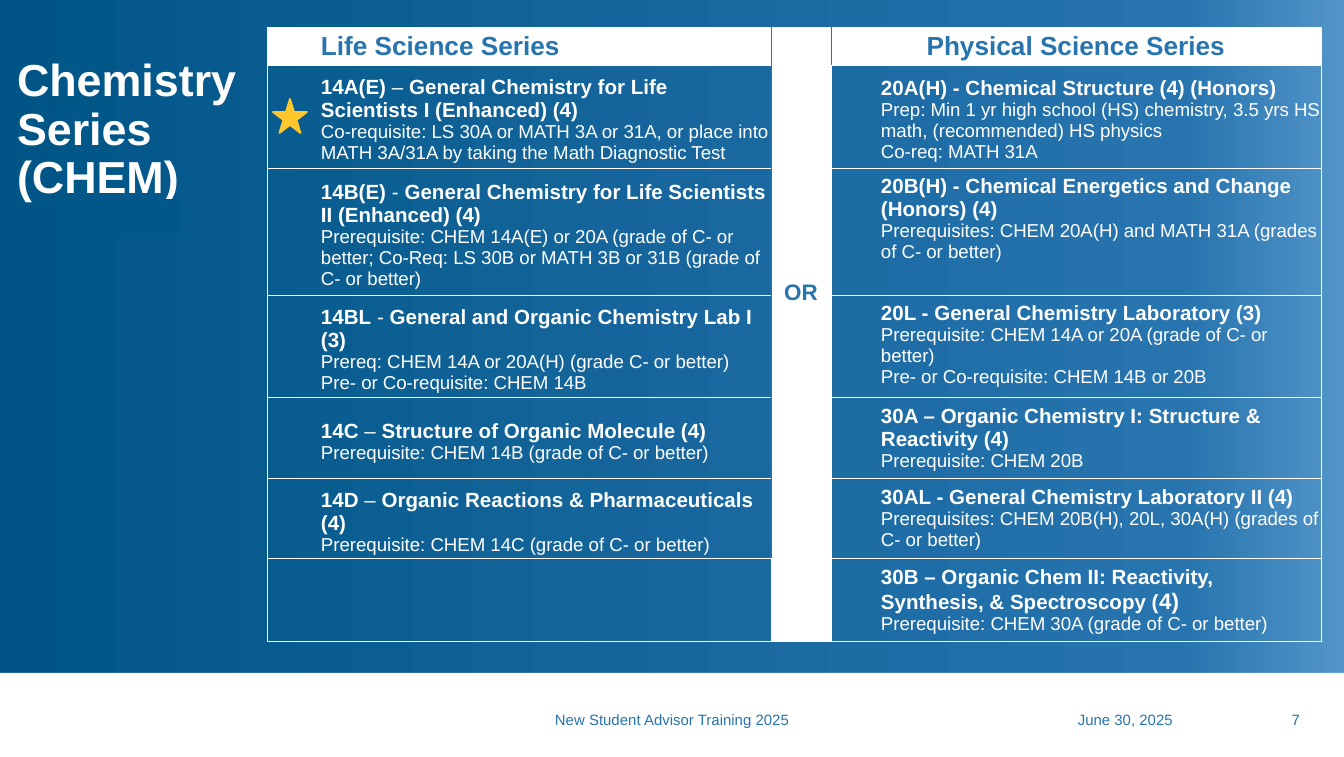
"""Build the chemistry series slide with its two course tracks."""
from copy import deepcopy

from lxml import etree
from pptx import Presentation
from pptx.dml.color import RGBColor
from pptx.enum.shapes import MSO_SHAPE
from pptx.enum.text import MSO_ANCHOR, MSO_AUTO_SIZE, PP_ALIGN
from pptx.oxml.ns import qn
from pptx.util import Pt

RECTANGLE, STAR = MSO_SHAPE.RECTANGLE, MSO_SHAPE.STAR_5_POINT
TOP, MIDDLE, BOTTOM = MSO_ANCHOR.TOP, MSO_ANCHOR.MIDDLE, MSO_ANCHOR.BOTTOM
LEFT, CENTER, RIGHT = PP_ALIGN.LEFT, PP_ALIGN.CENTER, PP_ALIGN.RIGHT
NO_AUTOFIT = MSO_AUTO_SIZE.NONE

WHITE, BLUE, NAVY, PATCH, GOLD = "FFFFFF", "2774AE", "005587", "00578A", "FFC72B"
BACKGROUND = [(0, NAVY), (0.88, BLUE), (1, "5295C9")]
COLUMNS = [504, 60, 490]
ROWS = [38, 103, 127, 103, 81, 80, 83]

LIFE_COURSES = [
    (("14A(E)", " – ", "General Chemistry for Life Scientists I (Enhanced) (4)"),
     "Co-requisite: LS 30A or MATH 3A or 31A, or place into MATH 3A/31A by taking the Math Diagnostic Test"),
    (("14B(E)", " - ", "General Chemistry for Life Scientists II (Enhanced) (4)"),
     "Prerequisite: CHEM 14A(E) or 20A (grade of C- or better; "
     "Co-Req: LS 30B or MATH 3B or 31B (grade of C- or better)"),
    (("14BL", " - ", "General and Organic Chemistry Lab I (3)"),
     "Prereq: CHEM 14A or 20A(H) (grade C- or better)", "Pre- or Co-requisite: CHEM 14B"),
    (("14C", " – ", "Structure of Organic Molecule (4)"),
     "Prerequisite: CHEM 14B (grade of C- or better)"),
    (("14D", " – ", "Organic Reactions & Pharmaceuticals (4)"),
     "Prerequisite: CHEM 14C (grade of C- or better)"),
]
PHYSICAL_COURSES = [
    ("20A(H) - Chemical Structure (4) (Honors)",
     "Prep: Min 1 yr high school (HS) chemistry, 3.5 yrs HS math, (recommended) HS physics",
     "Co-req: MATH 31A"),
    ("20B(H) - Chemical Energetics and Change (Honors) (4)",
     "Prerequisites: CHEM 20A(H) and MATH 31A (grades of C- or better)"),
    ("20L - General Chemistry Laboratory (3)",
     "Prerequisite: CHEM 14A or 20A (grade of C- or better)",
     "Pre- or Co-requisite: CHEM 14B or 20B"),
    ("30A – Organic Chemistry I: Structure & Reactivity (4)", "Prerequisite: CHEM 20B"),
    ("30AL - General Chemistry Laboratory II (4)",
     "Prerequisites: CHEM 20B(H), 20L, 30A(H) (grades of C- or better)"),
    ("30B – Organic Chem II: Reactivity, Synthesis, & Spectroscopy (",
     "Prerequisite: CHEM 30A (grade of C- or better)"),
]


def px(value):
    return round(value * 914400 / 134.4)


def color(value):
    return RGBColor.from_string(value)


class SlideBuilder:
    def __init__(self, presentation, font="Arial"):
        self.font = font
        self.slide = presentation.slides.add_slide(presentation.slide_layouts[5])

    def background(self, stops):
        fill = self.slide.background.fill
        fill.gradient()
        fill.gradient_angle = 0
        stop_list = next(self.slide.element.iter(qn("a:gsLst")))
        stop_list.append(deepcopy(stop_list[-1]))
        for stop, (position, value) in zip(fill.gradient_stops, stops):
            stop.position = position
            stop.color.rgb = color(value)

    def style(self, run, size, value, bold=False):
        run.font.name = self.font
        run.font.size = Pt(size)
        run.font.bold = bold
        run.font.color.rgb = color(value)

    def frame(self, text_frame, margins, anchor):
        text_frame.word_wrap = True
        text_frame.auto_size = NO_AUTOFIT
        text_frame.vertical_anchor = anchor
        (text_frame.margin_left, text_frame.margin_top,
         text_frame.margin_right, text_frame.margin_bottom) = map(px, margins)

    def set_text(self, text_frame, text, size, value, align=LEFT, bold=False):
        text_frame.text = text
        paragraph = text_frame.paragraphs[0]
        paragraph.alignment = align
        for run in paragraph.runs:
            self.style(run, size, value, bold)
        return paragraph

    def title(self, text, left, top, width, height):
        shape = self.slide.shapes.title
        shape.left, shape.top, shape.width, shape.height = map(px, (left, top, width, height))
        self.frame(shape.text_frame, (13, 7, 13, 7), TOP)
        self.set_text(shape.text_frame, text, 24, WHITE, bold=True).line_spacing = 0.9

    def shape(self, kind, left, top, width, height, value, line=0):
        shape = self.slide.shapes.add_shape(kind, *map(px, (left, top, width, height)))
        shape.shadow.inherit = False
        shape.fill.solid()
        shape.fill.fore_color.rgb = color(value)
        if line:
            shape.line.color.rgb = color(value)
            shape.line.width = Pt(line)
        else:
            shape.line.fill.background()

    def footer(self, text, left, width, align=RIGHT, inset=13):
        box = self.slide.shapes.add_textbox(*map(px, (left, 710, width, 20)))
        self.frame(box.text_frame, (inset, 1, 13, 1), BOTTOM)
        self.set_text(box.text_frame, text, 8, BLUE, align)

    def table(self, left, top, columns, rows):
        graphic = self.slide.shapes.add_table(
            len(rows), len(columns), *map(px, (left, top, sum(columns), sum(rows))))
        table = graphic.table
        table.first_row = table.horz_banding = False
        for column, width in zip(table.columns, columns):
            column.width = px(width)
        for row, height in zip(table.rows, rows):
            row.height = px(height)
        for row in range(len(rows)):
            for column in range(len(columns)):
                self.cell(table.cell(row, column), row == 0, column)
        return table

    def cell(self, cell, header, column):
        for side in "LRTB":
            divider = header and side in ("R", "LR", "L")[column]
            self.border(cell, side, BLUE if divider else WHITE)
        if header or column == 1:
            cell.fill.solid()
            cell.fill.fore_color.rgb = color(WHITE)
        else:
            cell.fill.background()
        cell.margin_left = px(54 if column == 0 else 0)
        cell.margin_top = px(0 if header or column == 1 else 7)
        cell.margin_right = cell.margin_bottom = 0
        cell.vertical_anchor = MIDDLE

    def border(self, cell, side, value):
        properties = cell._tc.get_or_add_tcPr()
        line = etree.SubElement(properties, qn(f"a:ln{side}"), w=str(Pt(0.5)))
        fill = etree.SubElement(line, qn("a:solidFill"))
        etree.SubElement(fill, qn("a:srgbClr"), val=value)

    def course(self, cell, heading, details, indent=0):
        first = cell.text_frame.paragraphs[0]
        for position, text in enumerate(heading):
            run = first.add_run()
            run.text = text
            self.style(run, 11, WHITE, bold=position != 1)
        for text in details:
            paragraph = cell.text_frame.add_paragraph()
            paragraph.text = text
            self.style(paragraph.runs[0], 10, WHITE)
        for paragraph in cell.text_frame.paragraphs:
            properties = paragraph._p.get_or_add_pPr()
            properties.set("marL", str(px(indent)))
            properties.set("indent", "0")


def main():
    presentation = Presentation()
    presentation.slide_width, presentation.slide_height = px(1344), px(757)
    builder = SlideBuilder(presentation)
    builder.background(BACKGROUND)
    builder.title("Chemistry Series\v(CHEM)", 4, 51, 269, 210)
    builder.shape(RECTANGLE, 0, 673, 1344, 84, WHITE)
    builder.footer("New Student Advisor Training 2025", 555, 251, LEFT, 0)
    builder.footer("June 30, 2025", 984, 202)
    builder.footer("7", 1196, 117)

    table = builder.table(267, 27, COLUMNS, ROWS)
    table.cell(0, 1).merge(table.cell(5, 1))
    headers = [("Life Science Series", 14, LEFT), ("OR", 12, CENTER),
               ("Physical Science Series", 14, CENTER)]
    for column, (text, size, align) in enumerate(headers):
        builder.set_text(table.cell(0, column).text_frame, text, size, BLUE, align, True)
    for row, (heading, *details) in enumerate(LIFE_COURSES, 1):
        builder.course(table.cell(row, 0), heading, details)
    for row, (heading, *details) in enumerate(PHYSICAL_COURSES, 1):
        cell = table.cell(row, 2)
        builder.course(cell, [heading], details, 50)
        cell.vertical_anchor = MIDDLE if row == 1 else TOP
    units = table.cell(6, 2).text_frame.paragraphs[0].add_run()
    units.text = "4)"
    builder.style(units, 12, WHITE, True)

    builder.shape(RECTANGLE, 81, 199, 98, 34, PATCH, 0.5)
    builder.shape(STAR, 273, 99, 34, 34, GOLD, 1)
    presentation.save("out.pptx")


if __name__ == "__main__":
    main()
